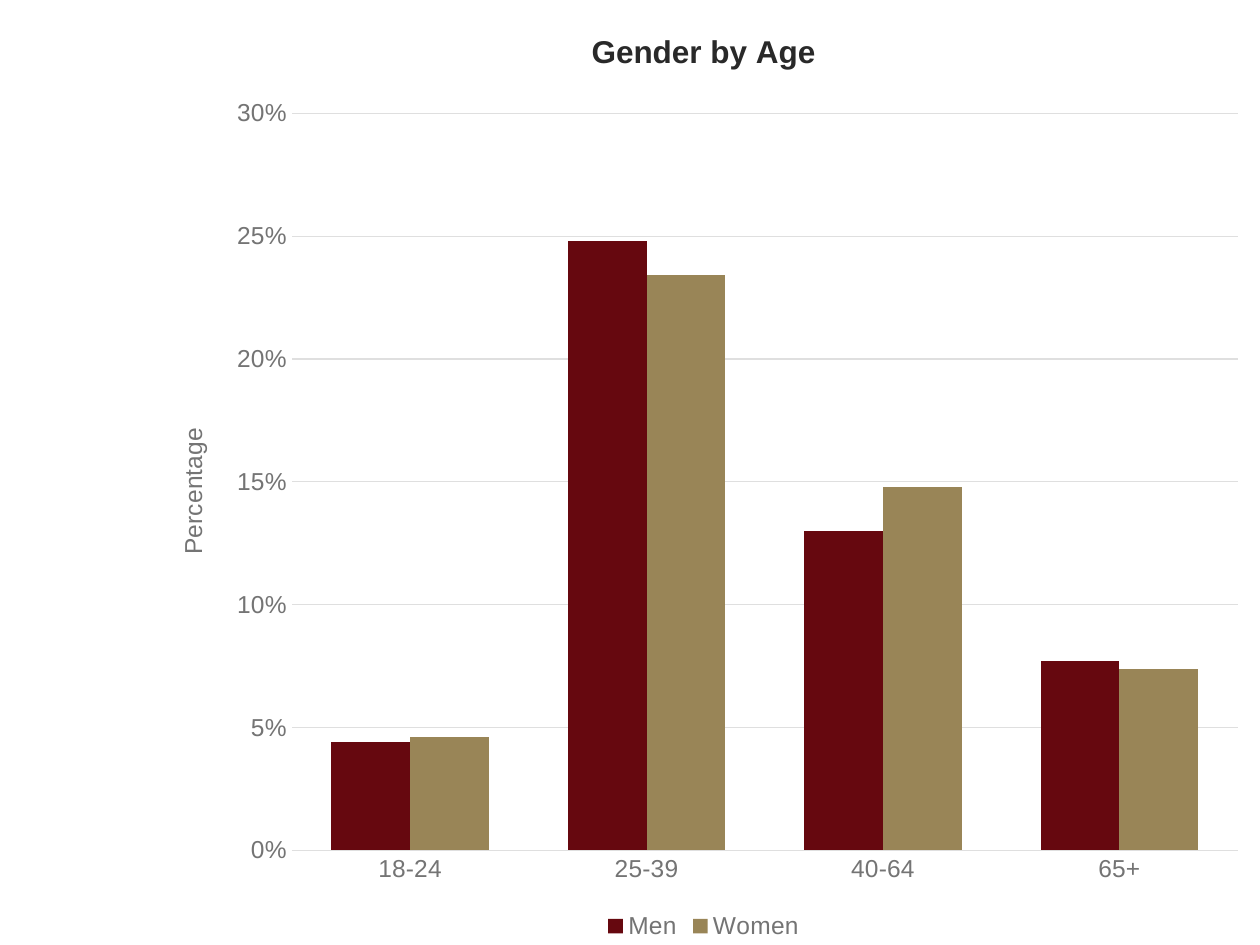
from lxml import etree
from pptx import Presentation
from pptx.chart.data import CategoryChartData
from pptx.dml.color import RGBColor
from pptx.enum.chart import XL_CHART_TYPE as ChartType
from pptx.enum.chart import XL_LEGEND_POSITION as LegendPosition
from pptx.enum.chart import XL_TICK_MARK as TickMark
from pptx.oxml.ns import qn
from pptx.util import Cm, Pt

FONT = "Arial"
DARK, GREY, LIGHT = "292929", "747474", "DFDFDF"
AGES = ["18-24", "25-39", "40-64", "65+"]
SERIES = [
    ("Men", [0.044, 0.248, 0.13, 0.077], "66080F"),
    ("Women", [0.046, 0.234, 0.148, 0.074], "998557"),
]


def color(value):
    return RGBColor.from_string(value)


def style_font(font, size, value, bold=False):
    font.name = FONT
    font.size = Pt(size)
    font.bold = bold
    font.color.rgb = color(value)


def style_line(line):
    line.color.rgb = color(LIGHT)
    line.width = Pt(0.75)


def set_title(owner, text, size, value, bold=False):
    """Title a chart or an axis."""
    frame = (owner.chart_title if hasattr(owner, "chart_title") else owner.axis_title).text_frame
    frame.text = text
    style_font(frame.paragraphs[0].runs[0].font, size, value, bold)


def place_plot(chart, **fractions):
    """Fix the inner plot area, in fractions of the chart's size."""
    area = chart._chartSpace.chart.plotArea
    for old in area.findall(qn("c:layout")):
        area.remove(old)
    layout = etree.Element(qn("c:layout"))
    area.insert(0, layout)
    manual = etree.SubElement(layout, qn("c:manualLayout"))
    settings = {"layoutTarget": "inner", "xMode": "edge", "yMode": "edge", **fractions}
    for name, value in settings.items():
        etree.SubElement(manual, qn(f"c:{name}")).set("val", str(value))


def style_axes(chart):
    ages, shares = chart.category_axis, chart.value_axis
    for axis in (ages, shares):
        axis.major_tick_mark = axis.minor_tick_mark = TickMark.NONE
        style_font(axis.tick_labels.font, 14, GREY)
    style_line(ages.format.line)

    shares.minimum_scale, shares.maximum_scale, shares.major_unit = 0, 0.3, 0.05
    shares.tick_labels.number_format = "0%"
    shares.tick_labels.number_format_is_linked = False
    shares.format.line.fill.background()
    shares.has_major_gridlines = True
    style_line(shares.major_gridlines.format.line)
    set_title(shares, "Percentage", 14, GREY)


def style_bars(plot):
    plot.gap_width = 100
    plot.overlap = 0
    plot.vary_by_categories = False
    for series, (_, _, value) in zip(plot.series, SERIES):
        series.format.fill.solid()
        series.format.fill.fore_color.rgb = color(value)


def add_legend(chart):
    chart.has_legend = True
    chart.legend.position = LegendPosition.BOTTOM
    chart.legend.include_in_layout = False
    style_font(chart.legend.font, 14, GREY)


def add_age_chart(page):
    data = CategoryChartData(number_format="0%")
    data.categories = AGES
    for name, values, _ in SERIES:
        data.add_series(name, values)
    chart = page.shapes.add_chart(
        ChartType.COLUMN_CLUSTERED, Cm(2.97), Cm(0), Cm(22.43), Cm(19.05), data
    ).chart
    style_font(chart.font, 10, DARK)
    set_title(chart, "Gender by Age", 18, DARK, bold=True)
    style_axes(chart)
    style_bars(chart.plots[0])
    add_legend(chart)
    place_plot(chart, x=0.13, y=0.12, w=0.85, h=0.78)


def main():
    deck = Presentation()
    deck.slide_width, deck.slide_height = Cm(25.4), Cm(19.05)
    page = deck.slides.add_slide(deck.slide_layouts[6])
    add_age_chart(page)
    deck.save("out.pptx")


if __name__ == "__main__":
    main()
